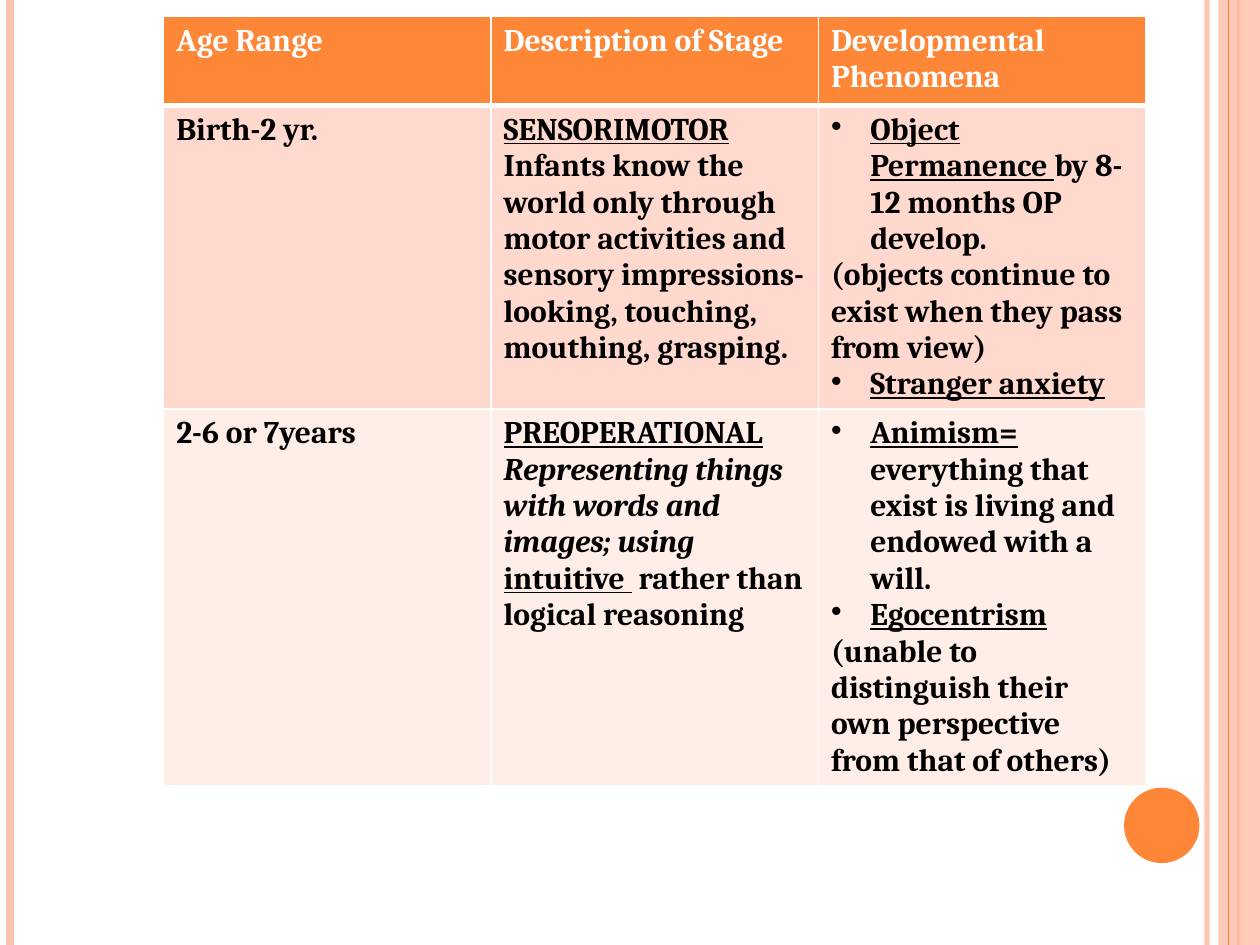
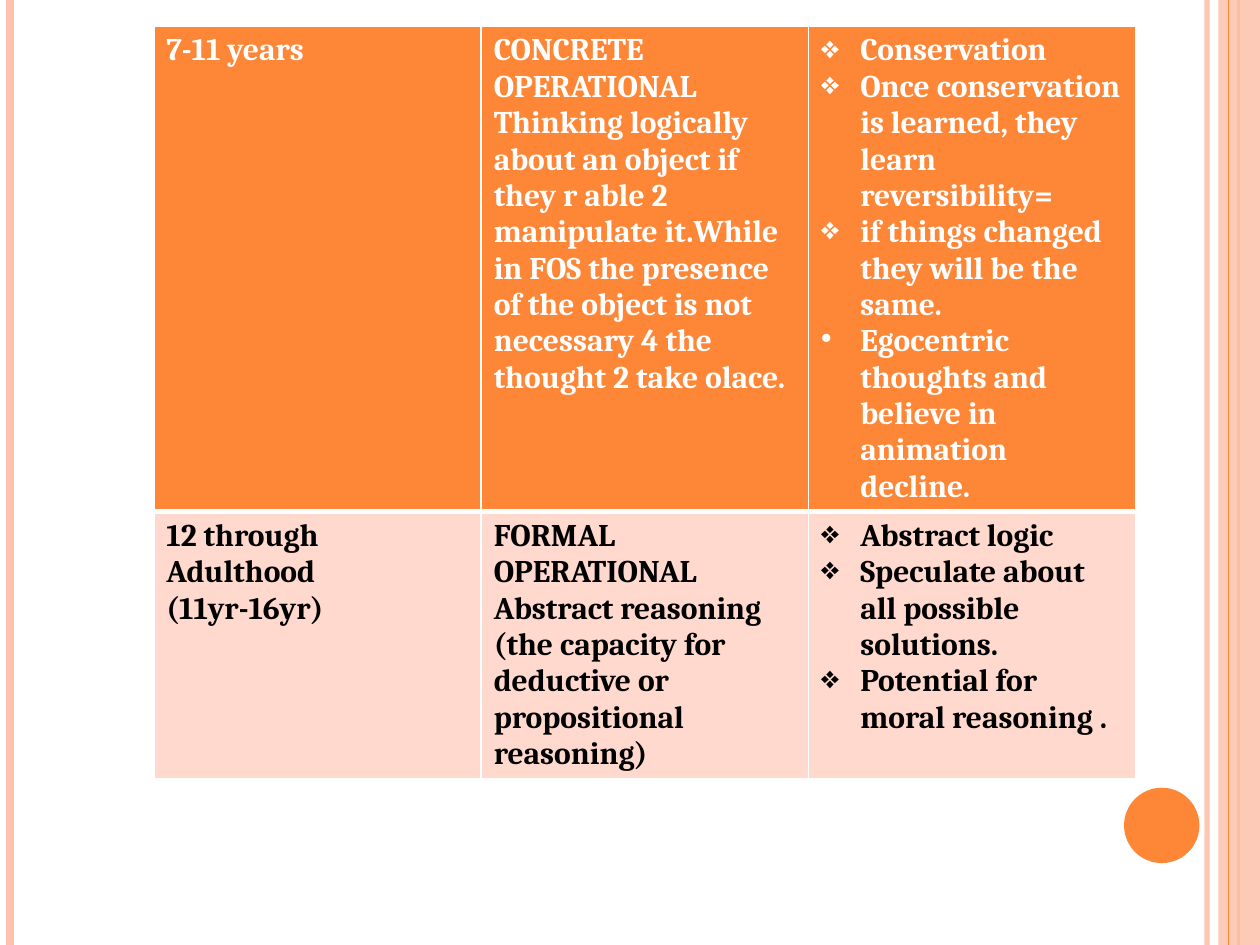
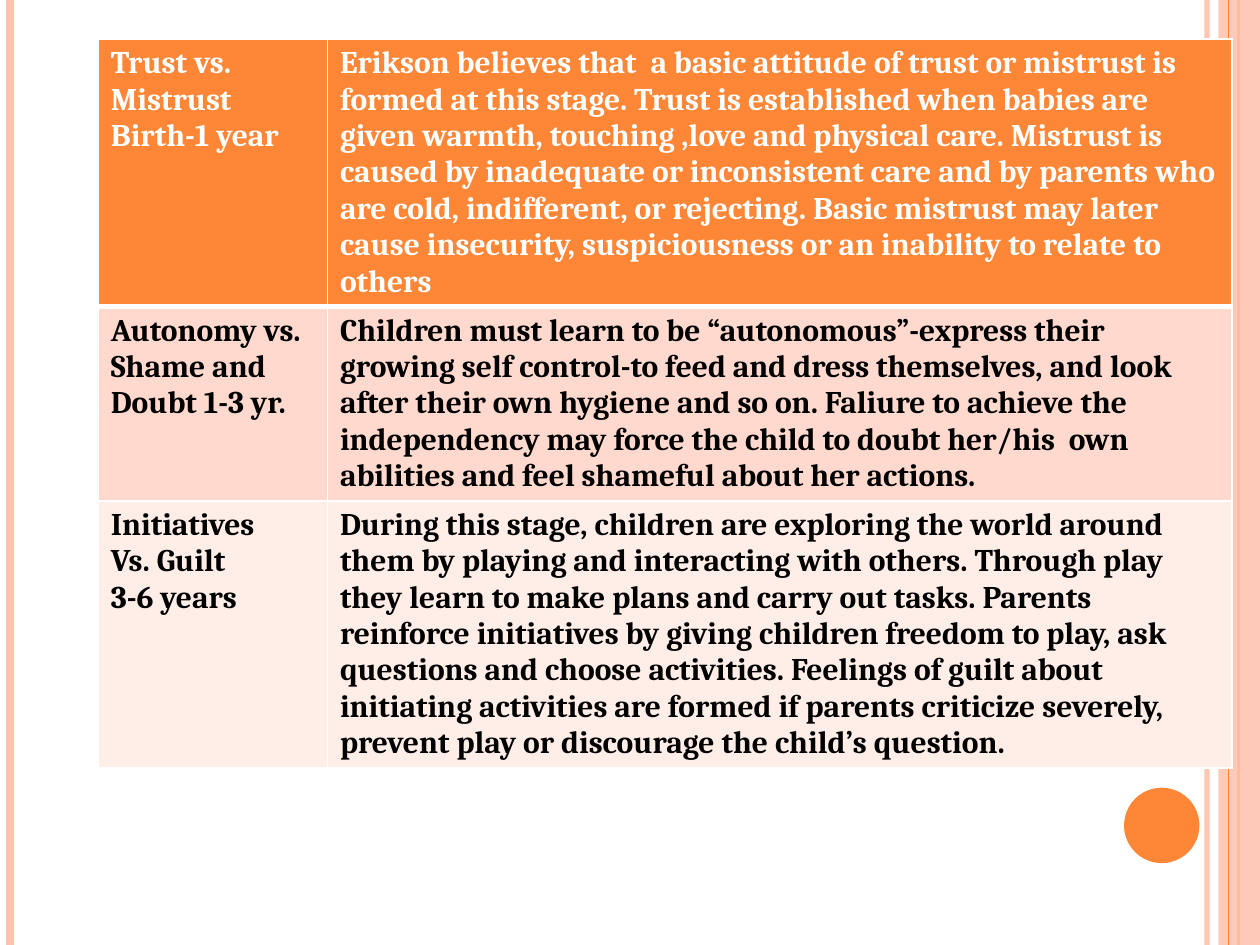
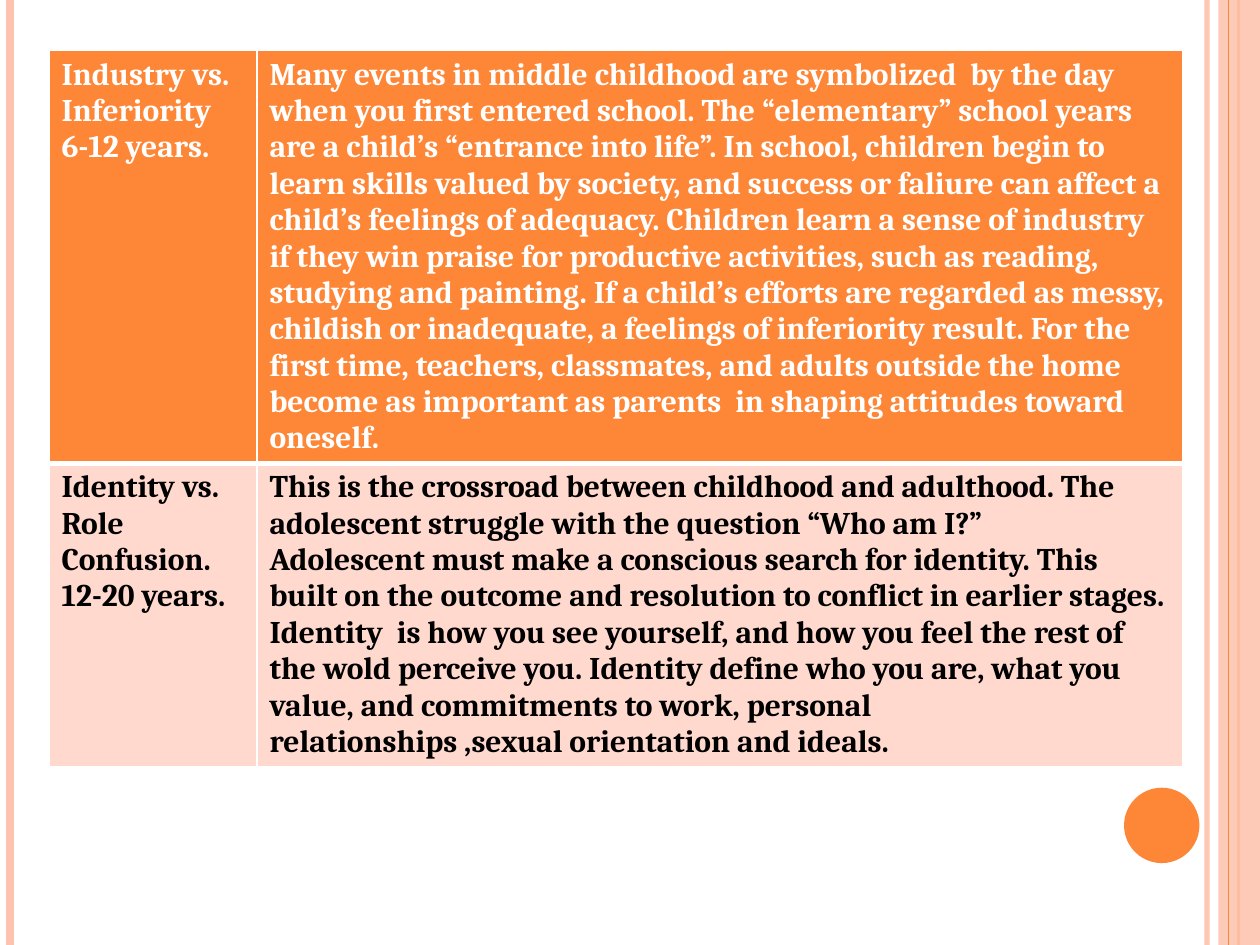
from lxml.etree import SubElement
from pptx import Presentation
from pptx.dml.color import RGBColor
from pptx.enum.shapes import MSO_CONNECTOR, MSO_SHAPE
from pptx.oxml import parse_xml
from pptx.oxml.ns import nsdecls, qn
from pptx.util import Cm, Pt

ORANGE, PEACH, WHITE, BLACK = "FE8637", "FEC3AE", "FFFFFF", "000000"
ROW_FILLS = [ORANGE, "FFD9CE", "FFEDE8"]
FONT = "Cambria"
BULLETS = "•❖"


def paint(color_format, color, alpha=None):
    """Set a colour from a hex string, with opacity in percent if given."""
    color_format.rgb = RGBColor.from_string(color)
    if alpha:
        choice = color_format._xFill.find(qn("a:srgbClr"))
        SubElement(choice, qn("a:alpha"), val=str(alpha * 1000))


def write_paragraph(paragraph, text, color):
    """Write a line: a leading bullet sign, _underlined_ and *italic* parts."""
    if text[0] in BULLETS:
        properties = paragraph._p.get_or_add_pPr()
        properties.set("marL", str(Cm(0.79)))
        properties.set("indent", str(-Cm(0.79)))
        SubElement(properties, qn("a:buChar"), char=text[0])
        text = text[1:]
    for u, stretch in enumerate(text.split("_")):
        for i, part in enumerate(stretch.split("*")):
            if not part:
                continue
            run = paragraph.add_run()
            run.text = part
            run.font.name, run.font.size, run.font.bold = FONT, Pt(18), True
            if u % 2:
                run.font.underline = True
            if i % 2:
                run.font.italic = True
            paint(run.font.color, color)


# Each slide: table corner, column widths and row heights in cm, then the rows
STAGES = [
    ((3.3, 0.33), [6.6] * 3, [1.8, 1.04, 1.04], [
        ["Age Range", "Description of Stage", "Developmental Phenomena"],
        ["Birth-2 yr.",
         "_SENSORIMOTOR_\n"
         "Infants know the world only through motor activities and sensory "
         "impressions-looking, touching, mouthing, grasping.",
         "•_Object Permanence _by 8-12 months OP develop.\n"
         "(objects continue to exist when they pass from view)\n"
         "•_Stranger anxiety_"],
        ["2-6 or 7years",
         "_PREOPERATIONAL_\n"
         "*Representing things with words and images; using *"
         "_intuitive _ rather than logical reasoning",
         "•_Animism=_ everything that exist is living and endowed with a will.\n"
         "•_Egocentrism_\n"
         "(unable to distinguish their own perspective from that of others)"],
    ]),
    ((3.1, 0.53), [6.6] * 3, [1.04, 1.04], [
        ["7-11 years",
         "CONCRETE OPERATIONAL\n"
         "Thinking logically about an object if they r able 2 manipulate it."
         "While in FOS the presence of the object is not necessary 4 the "
         "thought 2 take olace.",
         "❖Conservation\n"
         "❖Once conservation is learned, they learn reversibility=\n"
         "❖if things changed they will be the same.\n"
         "•Egocentric thoughts and believe in animation  decline."],
        ["12 through Adulthood\n(11yr-16yr)",
         "FORMAL OPERATIONAL\n"
         "Abstract reasoning (the capacity for deductive or propositional "
         "reasoning)",
         "❖Abstract logic\n"
         "❖Speculate about all possible solutions.\n"
         "❖Potential for moral reasoning ."],
    ]),
    ((1.98, 0.79), [4.62, 18.24], [3.18, 3.18, 4.37], [
        ["Trust vs.\nMistrust Birth-1 year",
         "Erikson believes that  a basic attitude of trust or mistrust is "
         "formed at this stage. Trust is established when babies are given "
         "warmth, touching ,love and physical care. Mistrust is caused by "
         "inadequate or inconsistent care and by parents who are cold, "
         "indifferent, or rejecting. Basic mistrust may later cause "
         "insecurity, suspiciousness or an inability to relate to others"],
        ["Autonomy vs. Shame and Doubt 1-3 yr.",
         "Children must learn to be “autonomous”-express their growing self "
         "control-to feed and dress themselves, and look after their own "
         "hygiene and so on. Faliure to achieve the independency may force "
         "the child to doubt her/his  own abilities and feel shameful about "
         "her actions."],
        ["Initiatives\nVs. Guilt\n3-6 years",
         "During this stage, children are exploring the world around them by "
         "playing and interacting with others. Through play they learn to "
         "make plans and carry out tasks. Parents reinforce initiatives by "
         "giving children freedom to play, ask questions and choose "
         "activities. Feelings of guilt about initiating activities are "
         "formed if parents criticize severely, prevent play or discourage "
         "the child’s question."],
    ]),
    ((0.99, 1.02), [4.19, 18.67], [1.04, 1.04], [
        ["Industry vs.\nInferiority\n6-12 years.",
         "Many events in middle childhood are symbolized  by the day when you "
         "first entered school. The “elementary” school years are a child’s "
         "“entrance into life”. In school, children begin to learn skills "
         "valued by society, and success or faliure can affect a child’s "
         "feelings of adequacy. Children learn a sense of industry if they "
         "win praise for productive activities, such as reading, studying "
         "and painting. If a child’s efforts are regarded as messy, childish "
         "or inadequate, a feelings of inferiority result. For the first "
         "time, teachers, classmates, and adults outside the home become as "
         "important as parents  in shaping attitudes toward oneself."],
        ["Identity vs.\nRole\nConfusion.\n12-20 years.",
         "This is the crossroad between childhood and adulthood. The "
         "adolescent struggle with the question “Who am I?”\n"
         "Adolescent must make a conscious search for identity. This built on "
         "the outcome and resolution to conflict in earlier stages. Identity  "
         "is how you see yourself, and how you feel the rest of the wold "
         "perceive you. Identity define who you are, what you value, and "
         "commitments to work, personal relationships ,sexual orientation "
         "and ideals."],
    ]),
]

prs = Presentation()
prs.slide_width, prs.slide_height = Cm(25.4), Cm(19.05)
blank = prs.slide_layouts[6]
slides = [prs.slides.add_slide(blank) for _ in STAGES]

# Shared decoration: drawn once, then moved to the slide master
drawing = slides[0].shapes
decoration = []
for x, color, width, alpha in [(24.33, PEACH, 3, 93), (0.2, PEACH, 4.5, None),
                               (24.97, ORANGE, 1.5, None),
                               (24.77, ORANGE, 0.75, None)]:
    stripe = drawing.add_connector(MSO_CONNECTOR.STRAIGHT,
                                   Cm(x), 0, Cm(x), prs.slide_height)
    stripe.line.width = Pt(width)
    stripe.line.fill.solid()
    paint(stripe.line.color, color, alpha)
    SubElement(stripe._element.spPr, qn("a:effectLst"))
    decoration.append(stripe)

band = drawing.add_shape(MSO_SHAPE.RECTANGLE, Cm(24.56), 0, Cm(0.84), prs.slide_height)
disc = drawing.add_shape(MSO_SHAPE.OVAL, Cm(22.66), Cm(15.88), Cm(1.52), Cm(1.52))
for shape, color, alpha in [(band, PEACH, 87), (disc, ORANGE, None)]:
    shape.shadow.inherit = False
    shape.line.fill.background()
    shape.fill.solid()
    paint(shape.fill.fore_color, color, alpha)

decoration[3:3] = [band]
decoration.append(disc)
master_tree = prs.slide_master.shapes._spTree
for part in decoration:
    master_tree.append(part._element)

# One table of developmental stages per slide
for slide, ((left, top), widths, heights, rows) in zip(slides, STAGES):
    table = slide.shapes.add_table(
        len(rows), len(widths), Cm(left), Cm(top),
        Cm(sum(widths)), Cm(sum(heights))).table
    table.horz_banding = False
    for column, width in zip(table.columns, widths):
        column.width = Cm(width)
    for r, (row, height) in enumerate(zip(rows, heights)):
        table.rows[r].height = Cm(height)
        for c, text in enumerate(row):
            cell = table.cell(r, c)
            cell.fill.solid()
            paint(cell.fill.fore_color, ROW_FILLS[r])

            # White borders, with a heavy rule under the first row
            borders = {"lnL": 1, "lnR": 1, "lnT": 3 if r == 1 else 1,
                       "lnB": 3 if r == 0 else 1}
            for position, (side, points) in enumerate(borders.items()):
                cell._tc.get_or_add_tcPr().insert(position, parse_xml(
                    f'<a:{side} {nsdecls("a")} w="{Pt(points)}"><a:solidFill>'
                    f'<a:srgbClr val="{WHITE}"/></a:solidFill></a:{side}>'))

            # Cell text
            frame = cell.text_frame
            for n, line in enumerate(text.split("\n")):
                paragraph = frame.add_paragraph() if n else frame.paragraphs[0]
                write_paragraph(paragraph, line, BLACK if r else WHITE)

prs.save("out.pptx")
